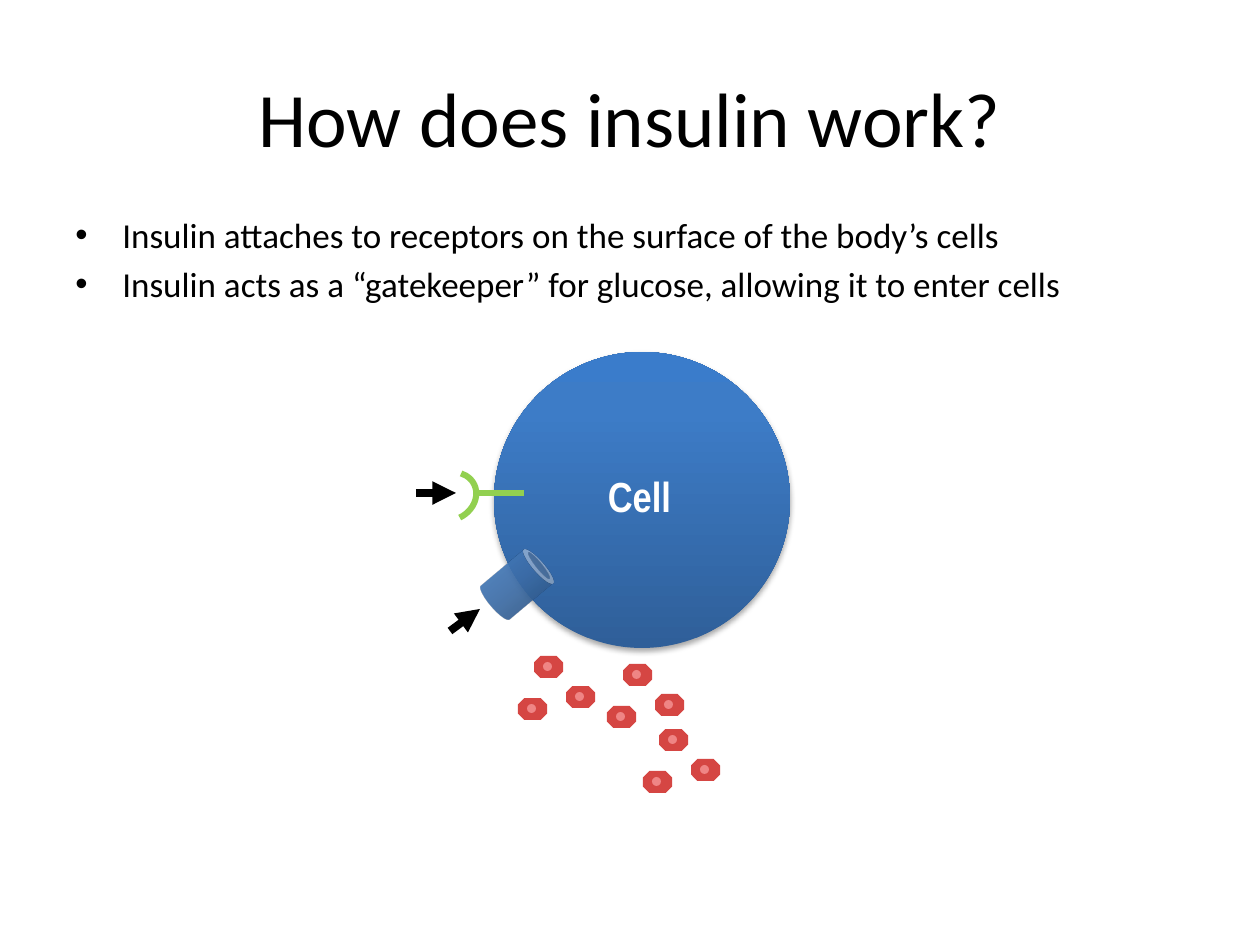
from dataclasses import dataclass
from typing import NamedTuple

from pptx import Presentation
from pptx import util as u
from pptx.dml.color import RGBColor
from pptx.enum import shapes, text
from pptx.oxml import parse_xml
from pptx.oxml.ns import nsdecls, qn

EMU_PER_PX = 914400 / 126


@dataclass(frozen=True)
class Theme:
    ink: str = "000000"
    white: str = "FFFFFF"
    receptor: str = "92D050"
    glucose: str = "D54643"
    glucose_core: str = "EF8585"
    body_font: str = "Calibri"
    label_font: str = "Arial Narrow"
    title_size: int = 44
    body_size: int = 20
    label_size: int = 24
    arrow_width: float = 4.5
    receptor_width: float = 3.5


class Box(NamedTuple):
    left: int
    top: int
    width: int
    height: int


class Point(NamedTuple):
    x: int
    y: int


class Stop(NamedTuple):
    position: int
    color: str
    opacity: int = 100


THEME = Theme()
KIND = shapes.MSO_SHAPE

BULLETS = [
    "Insulin attaches to receptors on the surface of the body’s cells",
    "Insulin acts as a “gatekeeper” for glucose, allowing it to enter cells",
]
CELL_STOPS = [Stop(0, "2F5F99"), Stop(80, "3D7CC7"), Stop(100, "3A7CCB")]
CHANNEL_STOPS = [Stop(0, "2A4C75", 91), Stop(50, "3C6CA6", 91), Stop(100, "4780C5", 91)]
OPENING_STOPS = [Stop(0, "2A4C75", 73), Stop(100, "3C6CA6", 73), Stop(100, "4780C5")]

CLUSTERS = [Point(518, 656), Point(607, 664), Point(643, 729)]
CLUSTER_OFFSETS = [Point(48, 30), Point(0, 42), Point(16, 0)]


def px(*values: int) -> list[u.Emu]:
    return [u.Emu(round(v * EMU_PER_PX)) for v in values]


def rgb(color: str) -> RGBColor:
    return RGBColor.from_string(color)


def place(sp, box: Box) -> None:
    sp.left, sp.top, sp.width, sp.height = px(*box)


def write(p, content: str, *, size: int, font: str = THEME.body_font,
          color: str = THEME.ink, bold: bool = False,
          align=text.PP_ALIGN.LEFT) -> None:
    p.alignment = align
    r = p.add_run()
    r.text = content
    r.font.name, r.font.size, r.font.bold = font, u.Pt(size), bold
    r.font.color.rgb = rgb(color)


def add_bullet(p) -> None:
    pPr = p._p.get_or_add_pPr()
    indent = px(47)[0]
    pPr.set("marL", str(indent))
    pPr.set("indent", str(-indent))
    pPr.append(parse_xml(f'<a:buFont {nsdecls("a")} typeface="Arial"/>'))
    pPr.append(parse_xml(f'<a:buChar {nsdecls("a")} char="•"/>'))


def add_shape(parent, kind, box: Box, color: str = "", rotation: float = 0):
    """Add a flat shape without outline; no colour means no fill yet."""
    sp = parent.add_shape(kind, *px(*box))
    sp.rotation = rotation
    sp.shadow.inherit = False
    sp.line.fill.background()
    if color:
        sp.fill.solid()
        sp.fill.fore_color.rgb = rgb(color)
    return sp


def fill_gradient(sp, stops: list[Stop], angle: int) -> None:
    """Fill with any number of stops; the angle runs clockwise in degrees."""
    marks = "".join(
        f'<a:gs pos="{st.position * 1000}"><a:srgbClr val="{st.color}">'
        f'<a:alpha val="{st.opacity * 1000}"/></a:srgbClr></a:gs>'
        for st in stops)
    fill = parse_xml(
        f'<a:gradFill {nsdecls("a")} rotWithShape="1"><a:gsLst>{marks}</a:gsLst>'
        f'<a:lin ang="{angle * 60000}" scaled="0"/></a:gradFill>')
    sp._element.spPr.find(qn("a:prstGeom")).addnext(fill)


def add_soft_shadow(sp) -> None:
    effects = sp._element.spPr.find(qn("a:effectLst"))
    effects.append(parse_xml(
        f'<a:outerShdw {nsdecls("a")} blurRad="40000" dist="23000" dir="5400000" '
        'rotWithShape="0"><a:srgbClr val="000000"><a:alpha val="35000"/>'
        '</a:srgbClr></a:outerShdw>'))


def add_line(s, start: Point, end: Point, color: str, width: float,
             arrow: bool = False) -> None:
    line = s.shapes.add_connector(shapes.MSO_CONNECTOR.STRAIGHT, *px(*start, *end))
    line.line.color.rgb = rgb(color)
    line.line.width = u.Pt(width)
    if arrow:
        line.line._get_or_add_ln().append(
            parse_xml(f'<a:tailEnd {nsdecls("a")} type="triangle"/>'))
    line._element.spPr.append(parse_xml(f'<a:effectLst {nsdecls("a")}/>'))


def add_title_and_bullets(s) -> None:
    title = s.shapes.title
    place(title, Box(63, 38, 1134, 157))
    title.text_frame.vertical_anchor = text.MSO_ANCHOR.MIDDLE
    write(title.text_frame.paragraphs[0], "How does insulin work?",
          size=THEME.title_size, align=text.PP_ALIGN.CENTER)

    tf = s.shapes.add_textbox(*px(63, 207, 1134, 155)).text_frame
    tf.word_wrap = True
    for i, bullet in enumerate(BULLETS):
        p = tf.add_paragraph() if i else tf.paragraphs[0]
        p.space_before = u.Pt(THEME.body_size * 0.2)
        write(p, bullet, size=THEME.body_size)
        add_bullet(p)


def add_cell(s) -> None:
    cell = add_shape(s.shapes, KIND.OVAL, Box(494, 352, 296, 296))
    fill_gradient(cell, CELL_STOPS, 270)
    add_soft_shadow(cell)
    tf = s.shapes.add_textbox(*px(595, 464, 89, 64)).text_frame
    tf.word_wrap = False
    write(tf.paragraphs[0], "Cell", size=THEME.label_size, font=THEME.label_font,
          color=THEME.white, bold=True, align=text.PP_ALIGN.CENTER)


def add_receptor(s) -> None:
    add_line(s, Point(416, 493), Point(456, 493), THEME.ink, THEME.arrow_width, arrow=True)
    add_line(s, Point(474, 493), Point(524, 493), THEME.receptor, THEME.receptor_width)
    cup = add_shape(s.shapes, KIND.ARC, Box(426, 469, 47, 55), rotation=64.2)
    cup.adjustments[0], cup.adjustments[1] = 139.548, 0
    cup.fill.background()
    cup.line.color.rgb = rgb(THEME.receptor)
    cup.line.width = u.Pt(THEME.receptor_width)


def add_channel(s) -> None:
    add_line(s, Point(450, 631), Point(480, 609), THEME.ink, THEME.arrow_width, arrow=True)
    channel = add_shape(s.shapes, KIND.CAN, Box(495, 551, 44, 67), rotation=49.8)
    fill_gradient(channel, CHANNEL_STOPS, 180)
    opening = add_shape(s.shapes, KIND.OVAL, Box(536, 549, 6, 33), rotation=320.4)
    fill_gradient(opening, OPENING_STOPS, 180)


def add_glucose(s, at: Point) -> None:
    molecule = s.shapes.add_group_shape().shapes
    add_shape(molecule, KIND.OCTAGON, Box(*at, 29, 22), THEME.glucose)
    add_shape(molecule, KIND.OVAL, Box(at.x + 9, at.y + 6, 9, 9), THEME.glucose_core)


def main() -> None:
    prs = Presentation()
    prs.slide_width, prs.slide_height = u.Inches(10), u.Inches(7.5)
    s = prs.slides.add_slide(prs.slide_layouts.get_by_name("Title Only"))
    add_title_and_bullets(s)
    add_cell(s)
    add_receptor(s)
    for origin in CLUSTERS:
        for offset in CLUSTER_OFFSETS:
            add_glucose(s, Point(origin.x + offset.x, origin.y + offset.y))
    add_channel(s)
    prs.save("out.pptx")


if __name__ == "__main__":
    main()
